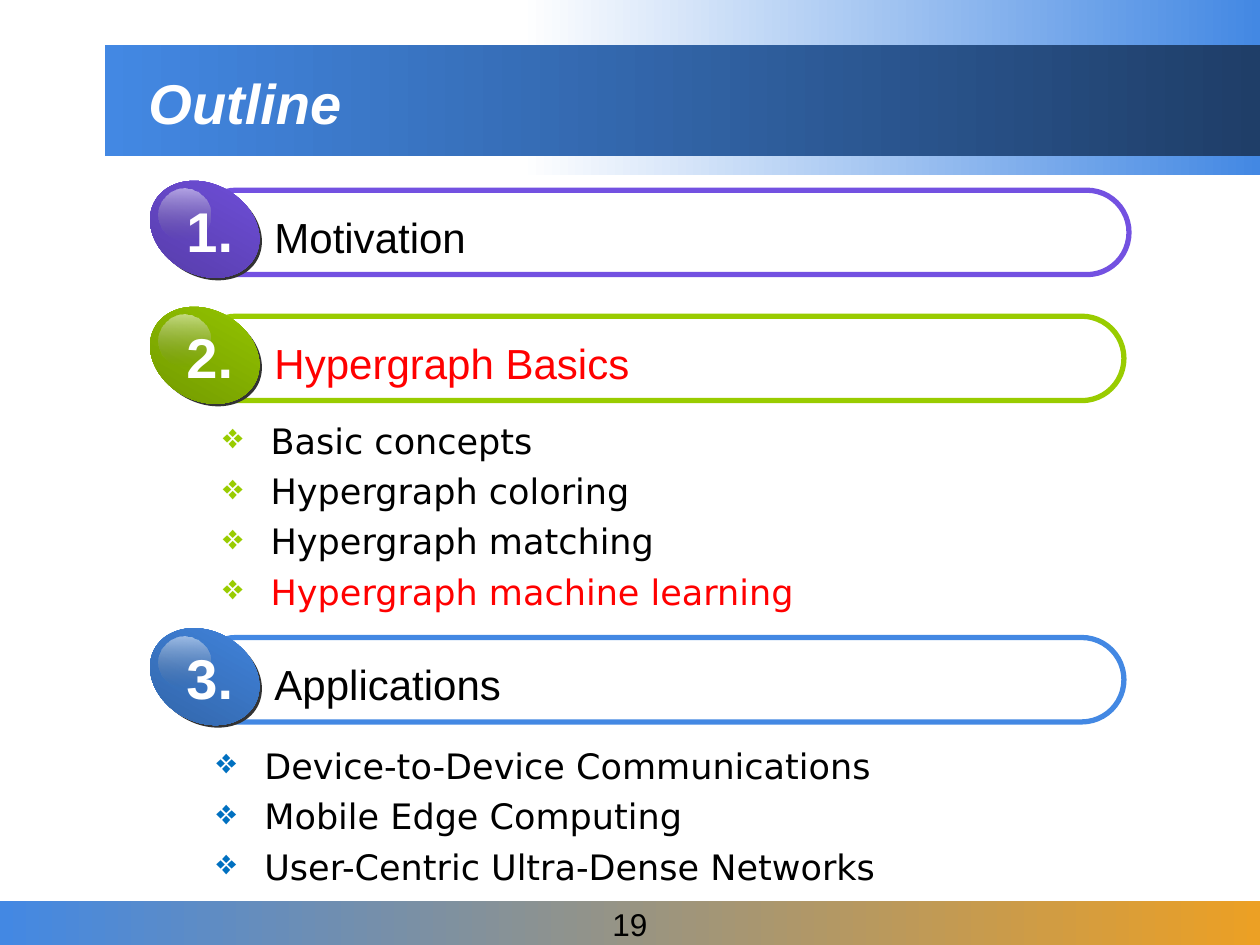
import pptx
import pptx.util
import pptx.dml.color
import pptx.enum.shapes
import pptx.enum.text
import pptx.oxml.ns
import lxml.etree

Inches = pptx.util.Inches
RGBColor = pptx.dml.color.RGBColor
SHAPE = pptx.enum.shapes.MSO_SHAPE
ANCHOR = pptx.enum.text.MSO_ANCHOR
ALIGN = pptx.enum.text.PP_ALIGN
qn = pptx.oxml.ns.qn

WHITE = RGBColor(0xFF, 0xFF, 0xFF)
BLACK = RGBColor(0x00, 0x00, 0x00)
RED = RGBColor(0xFF, 0x00, 0x00)
BLUE = RGBColor(0x43, 0x88, 0xE3)
DARK_BLUE = RGBColor(0x30, 0x61, 0xA2)
NAVY = RGBColor(0x1F, 0x3E, 0x68)
ORANGE = RGBColor(0xEC, 0xA0, 0x24)
PURPLE = RGBColor(0x73, 0x51, 0xE1)
DARK_PURPLE = RGBColor(0x52, 0x3A, 0xA1)
GREEN = RGBColor(0x99, 0xCC, 0x00)
DARK_GREEN = RGBColor(0x6D, 0x92, 0x00)
BULLET_BLUE = RGBColor(0x00, 0x70, 0xC0)
CHARCOAL = RGBColor(0x33, 0x33, 0x33)
GRAY = RGBColor(0x76, 0x76, 0x76)

deck = pptx.Presentation()
deck.slide_width, deck.slide_height = Inches(10), Inches(7.5)
page = deck.slides.add_slide(deck.slide_layouts[6])


def add_text(lines, left, top, width, height, size=24, font="Arial", color=BLACK,
             bold=False, italic=False, align=ALIGN.LEFT, anchor=ANCHOR.TOP,
             wrap=False, bullet=None, highlight=None):
    """Add a text box; bullet is the bullet colour, highlight a line shown in red."""
    box = page.shapes.add_textbox(Inches(left), Inches(top), Inches(width), Inches(height))
    frame = box.text_frame
    frame.word_wrap, frame.vertical_anchor = wrap, anchor
    for index, line in enumerate(lines):
        para = frame.paragraphs[0] if index == 0 else frame.add_paragraph()
        para.alignment = align
        if bullet is not None:
            if index:
                para.space_before = pptx.util.Pt(4.7)
            props = para._p.get_or_add_pPr()
            props.set("marL", str(Inches(0.38)))
            props.set("indent", str(-Inches(0.38)))
            bullet_color = lxml.etree.SubElement(props, qn("a:buClr"))
            lxml.etree.SubElement(bullet_color, qn("a:srgbClr"), val=str(bullet))
            lxml.etree.SubElement(props, qn("a:buChar"), char="❖")
        span = para.add_run()
        span.text = line
        span.font.name, span.font.size = font, pptx.util.Pt(size)
        span.font.bold, span.font.italic = bold, italic
        span.font.color.rgb = RED if line == highlight else color


def add_filled(shapes, kind, left, top, width, height, colors, angle=0, alphas=()):
    """Add a borderless shape with one solid colour or a two-colour gradient."""
    shape = shapes.add_shape(kind, Inches(left), Inches(top), Inches(width), Inches(height))
    shape.shadow.inherit = False
    shape.line.fill.background()
    if len(colors) == 1:
        shape.fill.solid()
        shape.fill.fore_color.rgb = colors[0]
        return shape
    shape.fill.gradient()
    shape.fill.gradient_angle = angle
    for stop, color in zip(shape.fill.gradient_stops, colors):
        stop.color.rgb = color
    swatches = shape._element.spPr.iter(qn("a:srgbClr"))
    for swatch, alpha in zip(swatches, alphas):
        lxml.etree.SubElement(swatch, qn("a:alpha"), val=str(alpha * 1000))
    return shape


# Header bands, footer band and title
add_filled(page.shapes, SHAPE.RECTANGLE, 4.13, 0, 5.87, 1.39, [WHITE, BLUE])
add_filled(page.shapes, SHAPE.RECTANGLE, 0, 7.15, 10, 0.35, [BLUE, ORANGE])
add_filled(page.shapes, SHAPE.RECTANGLE, 0.83, 0.36, 9.17, 0.88, [BLUE, NAVY])
add_text(["19"], 0, 7.15, 10, 0.36, size=18, align=ALIGN.CENTER, anchor=ANCHOR.MIDDLE, wrap=True)
add_text(["Outline"], 1.08, 0.5, 8.75, 0.62, size=32, color=WHITE, bold=True, italic=True,
         anchor=ANCHOR.MIDDLE, wrap=True)

# Numbered sections: outlined pill, glossy ball, label and number
sections = [
    ("Motivation", 1.51, 7.42, 1.74, PURPLE, DARK_PURPLE),
    ("Hypergraph Basics", 2.51, 7.38, 3.05, GREEN, DARK_GREEN),
    ("Applications", 5.06, 7.38, 2.02, BLUE, DARK_BLUE),
]
for number, (label, top, width, label_width, color, dark) in enumerate(sections, 1):
    pill = page.shapes.add_shape(SHAPE.ROUNDED_RECTANGLE, Inches(1.54), Inches(top),
                                 Inches(width), Inches(0.67))
    pill.adjustments[0] = 0.5
    pill.shadow.inherit = False
    pill.fill.background()
    pill.line.color.rgb, pill.line.width = color, pptx.util.Pt(3)

    ball = page.shapes.add_group_shape().shapes
    for left, rise, colors in [(1.19, 0.03, [CHARCOAL]), (1.17, 0.05, [color, dark])]:
        disc = add_filled(ball, SHAPE.OVAL, left, top - rise, 0.91, 0.72, colors, angle=270)
        disc.rotation = 29.3
    add_filled(ball, SHAPE.OVAL, 1.26, top - 0.01, 0.41, 0.41, [WHITE, GRAY],
               angle=270, alphas=(50, 0))

    add_text([label], 2.08, top + 0.12, label_width, 0.51, highlight="Hypergraph Basics")
    add_text([f"{number}."], 1.38, top, 0.57, 0.63, size=32, color=WHITE, bold=True,
             align=ALIGN.CENTER)

# Bulleted topics under sections 2 and 3
add_text(["Basic concepts", "Hypergraph coloring", "Hypergraph matching",
          "Hypergraph machine learning"], 1.67, 3.28, 6.84, 1.64, size=20,
         font="DejaVu Sans", wrap=True, bullet=GREEN, highlight="Hypergraph machine learning")
add_text(["Device-to-Device Communications", "Mobile Edge Computing",
          "User-Centric Ultra-Dense Networks"], 1.62, 5.86, 6.84, 1.39, size=20,
         font="DejaVu Sans", wrap=True, bullet=BULLET_BLUE)

deck.save("out.pptx")
